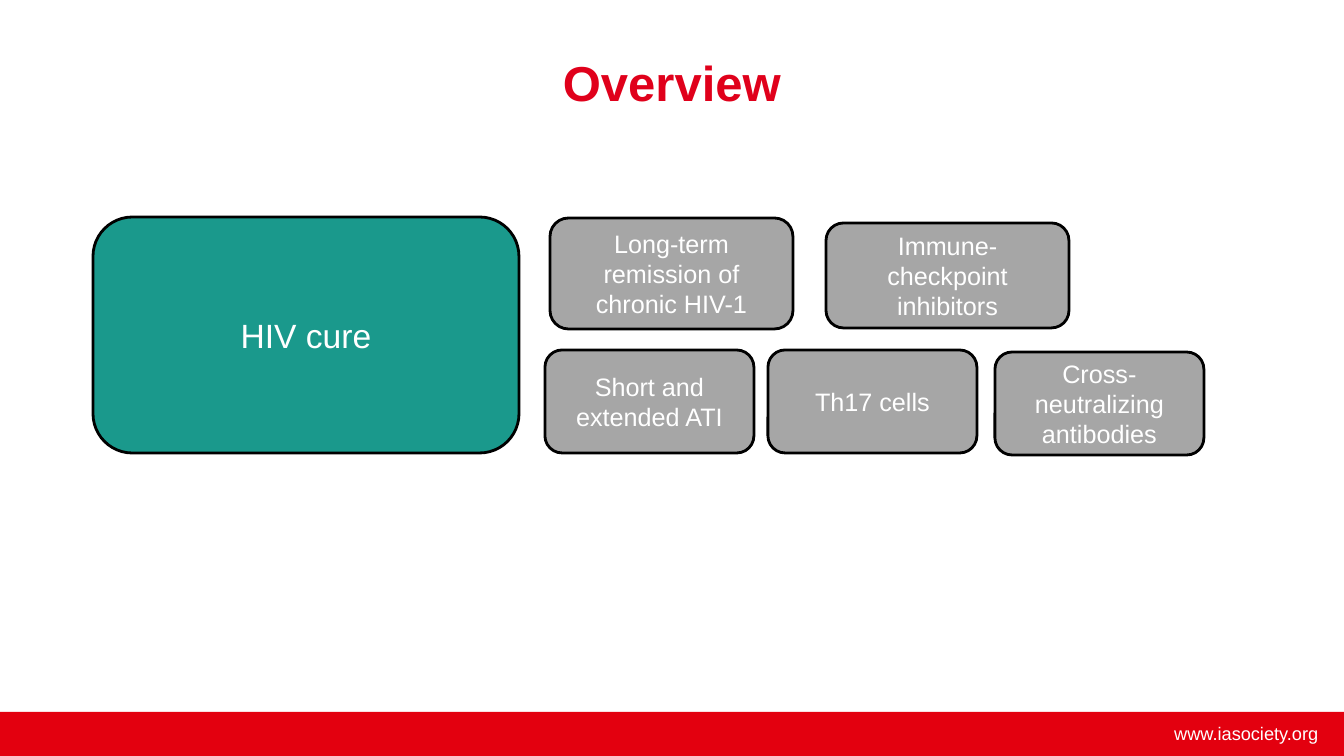
from dataclasses import dataclass

from pptx import Presentation
from pptx.dml.color import RGBColor
from pptx.enum import shapes, text
from pptx.util import Pt

EMU_PER_PX = 12192000 / 1344
SLIDE_WIDTH, SLIDE_HEIGHT = 1344, 756


@dataclass(frozen=True)
class Theme:
    font: str = "Arial"
    white: str = "FFFFFF"
    outline: str = "000000"
    title_red: str = "E0001B"
    footer_red: str = "E3000F"
    teal: str = "1A998C"
    grey: str = "A6A6A6"
    title_size: int = 35
    subject_size: int = 24
    topic_size: int = 18
    footer_size: int = 13
    outline_width: int = 2


THEME = Theme()

# Text, left, top, width, height
TOPICS = [
    ("Immune-checkpoint inhibitors", 826, 223, 243, 105),
    ("Long-term remission of chronic HIV-1", 550, 218, 243, 111),
    ("Short and extended ATI", 545, 350, 209, 103),
    ("Th17 cells", 768, 350, 209, 103),
    ("Cross-neutralizing antibodies", 995, 352, 209, 103),
]


def px(length):
    return round(length * EMU_PER_PX)


def write_text(shape, wording, size, color=THEME.white, bold=False,
               align=text.PP_ALIGN.CENTER, anchor=text.MSO_ANCHOR.MIDDLE):
    frame = shape.text_frame
    frame.word_wrap = True
    frame.vertical_anchor = anchor
    paragraph = frame.paragraphs[0]
    paragraph.alignment = align
    run = paragraph.add_run()
    run.text = wording
    run.font.color.rgb = RGBColor.from_string(color)
    formats = {"name": THEME.font, "size": Pt(size), "bold": bold}
    for name, value in formats.items():
        setattr(run.font, name, value)


def add_filled_shape(slide, kind, box, fill):
    shape = slide.shapes.add_shape(kind, *map(px, box))
    shape.shadow.inherit = False
    shape.fill.solid()
    shape.fill.fore_color.rgb = RGBColor.from_string(fill)
    shape.line.fill.background()
    return shape


def add_card(slide, wording, box, fill, size):
    card = add_filled_shape(
        slide, shapes.MSO_SHAPE.ROUNDED_RECTANGLE, box, fill)
    card.line.color.rgb = RGBColor.from_string(THEME.outline)
    card.line.width = Pt(THEME.outline_width)
    write_text(card, wording, size)


def add_label(slide, wording, box, size, **formats):
    label = slide.shapes.add_textbox(*map(px, box))
    write_text(label, wording, size, **formats)


def add_footer(slide):
    add_filled_shape(slide, shapes.MSO_SHAPE.RECTANGLE,
                     (0, 712, SLIDE_WIDTH, 44), THEME.footer_red)
    add_label(slide, "www.iasociety.org", (1051, 717, 277, 32),
              THEME.footer_size, align=text.PP_ALIGN.RIGHT,
              anchor=text.MSO_ANCHOR.TOP)


def main():
    presentation = Presentation()
    presentation.slide_width = px(SLIDE_WIDTH)
    presentation.slide_height = px(SLIDE_HEIGHT)
    slide = presentation.slides.add_slide(presentation.slide_layouts[6])

    add_footer(slide)
    add_label(slide, "Overview", (168, 0, 1008, 163), THEME.title_size,
              color=THEME.title_red, bold=True)
    add_card(slide, "HIV cure", (93, 217, 426, 236),
             THEME.teal, THEME.subject_size)
    for wording, *box in TOPICS:
        add_card(slide, wording, box, THEME.grey, THEME.topic_size)

    presentation.save("out.pptx")


if __name__ == "__main__":
    main()
